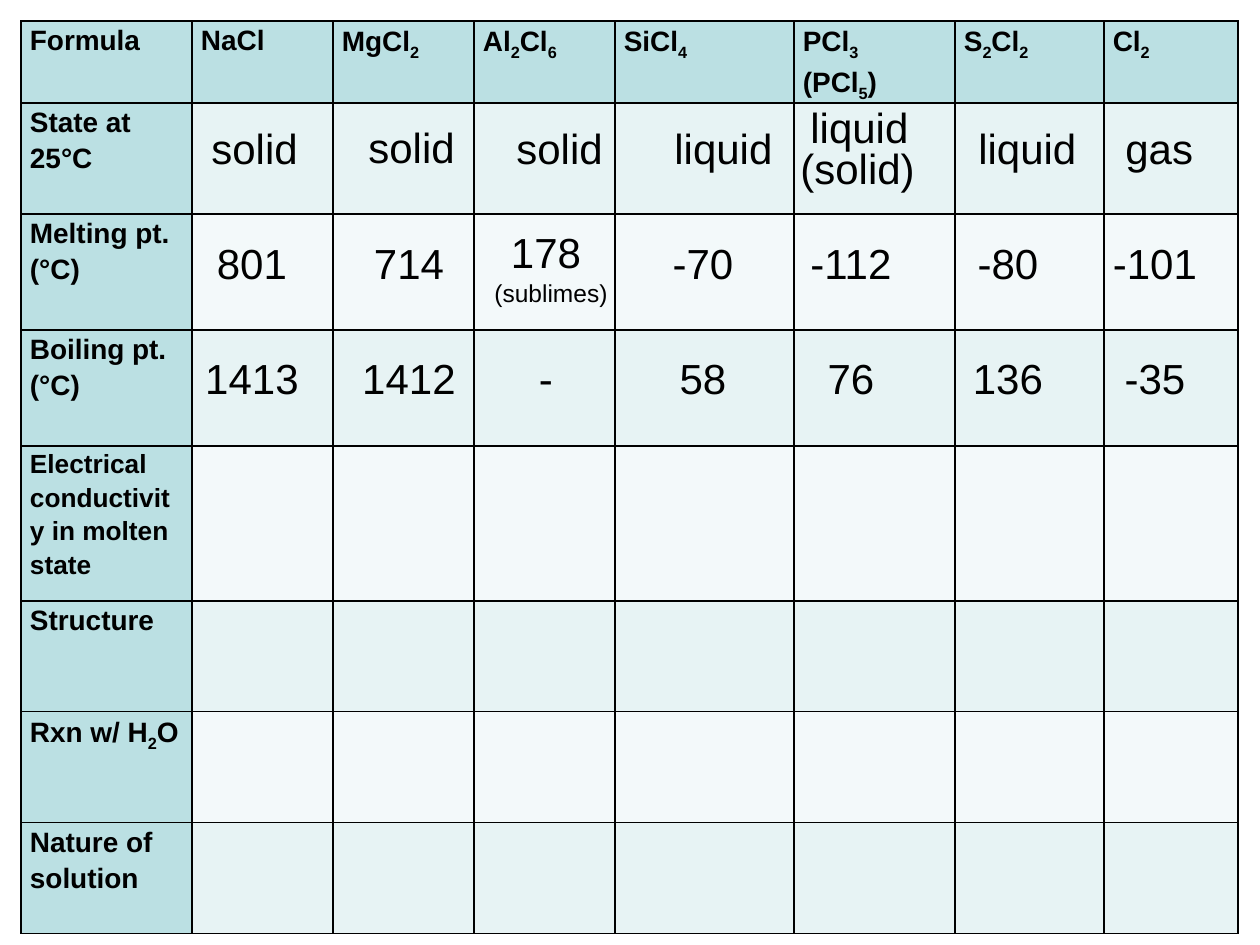
from lxml.etree import SubElement
from pptx import Presentation
from pptx.dml.color import RGBColor as RGB
from pptx.enum.text import MSO_AUTO_SIZE as AUTO, PP_ALIGN as ALIGN
from pptx.oxml.ns import qn
from pptx.util import Pt

PX = 914400 / 126
FONT = "Arial"
COLORS = {"head": "BBE0E3", "odd": "E7F3F4", "even": "F3F9FA", "ink": "000000"}

COL_WIDTHS = [171, 141, 141, 141, 179, 161, 149, 134]
ROW_HEIGHTS = [77, 111, 116, 116, 155, 111, 111, 111]
FORMULAS = ["Formula", "NaCl", "MgCl_2", "Al_2Cl_6", "SiCl_4",
            "PCl_3\n(PCl_5)", "S_2Cl_2", "Cl_2"]
PROPERTIES = ["State at 25°C", "Melting pt. (°C)", "Boiling pt. (°C)",
              "Electrical conductivity in molten state", "Structure",
              "Rxn w/ H_2O", "Nature of solution"]
SMALL_LABEL = PROPERTIES[3]

STATES = [("solid", 199, 116, 126), ("solid", 356, 115, 126),
          ("solid", 504, 116, 126), ("(solid)", 788, 136, 158),
          ("liquid", 662, 116, 126), ("liquid", 798, 95, 126),
          ("gas", 1113, 116, 105), ("liquid", 966, 116, 126)]
POINT_LEFTS = [189, 346, 483, 640, 788, 945, 1092]
MELTING = ["801", "714", "178", "-70", "-112", "-80", "-101"]
BOILING = ["1413", "1412", "-", "58", "76", "136", "-35"]


def px(n):
    return round(n * PX)


def set_font(p, size, bold=False):
    p.font.name = FONT
    p.font.size = Pt(size)
    p.font.bold = bold
    p.font.color.rgb = RGB.from_string(COLORS["ink"])


def add_formula(p, text):
    first, *rest = text.split("_")
    p.add_run().text = first
    for part in rest:
        r = p.add_run()
        r.text = part[0]
        r._r.get_or_add_rPr().set("baseline", "-25000")
        if part[1:]:
            p.add_run().text = part[1:]


def fill_label(cell, text):
    tf = cell.text_frame
    for i, line in enumerate(text.split("\n")):
        p = tf.add_paragraph() if i else tf.paragraphs[0]
        p.line_spacing = 1.15
        set_font(p, 15 if text == SMALL_LABEL else 16, True)
        add_formula(p, line)


def style_cell(cell, color):
    cell.margin_left = cell.margin_right = px(9)
    cell.margin_top = cell.margin_bottom = 0
    tc_pr = cell._tc.get_or_add_tcPr()
    for side in ("a:lnL", "a:lnR", "a:lnT", "a:lnB"):
        ln = SubElement(tc_pr, qn(side), w=str(Pt(1)))
        fill = SubElement(ln, qn("a:solidFill"))
        SubElement(fill, qn("a:srgbClr"), val=COLORS["ink"])
    cell.fill.solid()
    cell.fill.fore_color.rgb = RGB.from_string(COLORS[color])


def add_chloride_table(slide):
    table = slide.shapes.add_table(
        len(ROW_HEIGHTS), len(COL_WIDTHS), px(21), px(21),
        px(sum(COL_WIDTHS)), px(sum(ROW_HEIGHTS))).table
    table.first_row = table.horz_banding = False
    for col, width in zip(table.columns, COL_WIDTHS):
        col.width = px(width)
    for row, height in zip(table.rows, ROW_HEIGHTS):
        row.height = px(height)
    for i, row in enumerate(table.rows):
        for j, cell in enumerate(row.cells):
            is_head = i == 0 or j == 0
            style_cell(cell, "head" if is_head else "odd" if i % 2 else "even")
    for j, formula in enumerate(FORMULAS):
        fill_label(table.cell(0, j), formula)
    for i, name in enumerate(PROPERTIES, 1):
        fill_label(table.cell(i, 0), name)


def add_value(slide, text, x, y, width=126, height=64, size=24, align=ALIGN.CENTER):
    tf = slide.shapes.add_textbox(px(x), px(y), px(width), px(height)).text_frame
    tf.word_wrap = True
    tf.auto_size = AUTO.SHAPE_TO_FIT_TEXT
    p = tf.paragraphs[0]
    p.text = text
    p.alignment = align
    set_font(p, size)


def main():
    prs = Presentation()
    prs.slide_width, prs.slide_height = px(1260), px(945)
    slide = prs.slides.add_slide(prs.slide_layouts[6])
    add_chloride_table(slide)
    for text, x, y, width in STATES:
        add_value(slide, text, x, y, width, align=ALIGN.LEFT)
    for text, x in zip(MELTING, POINT_LEFTS):
        add_value(slide, text, x, 220 if text == "178" else 231)
    add_value(slide, "(sublimes)", 472, 272, 158, 43, 14)
    for text, x in zip(BOILING, POINT_LEFTS):
        add_value(slide, text, x, 346)
    prs.save("out.pptx")


if __name__ == "__main__":
    main()
